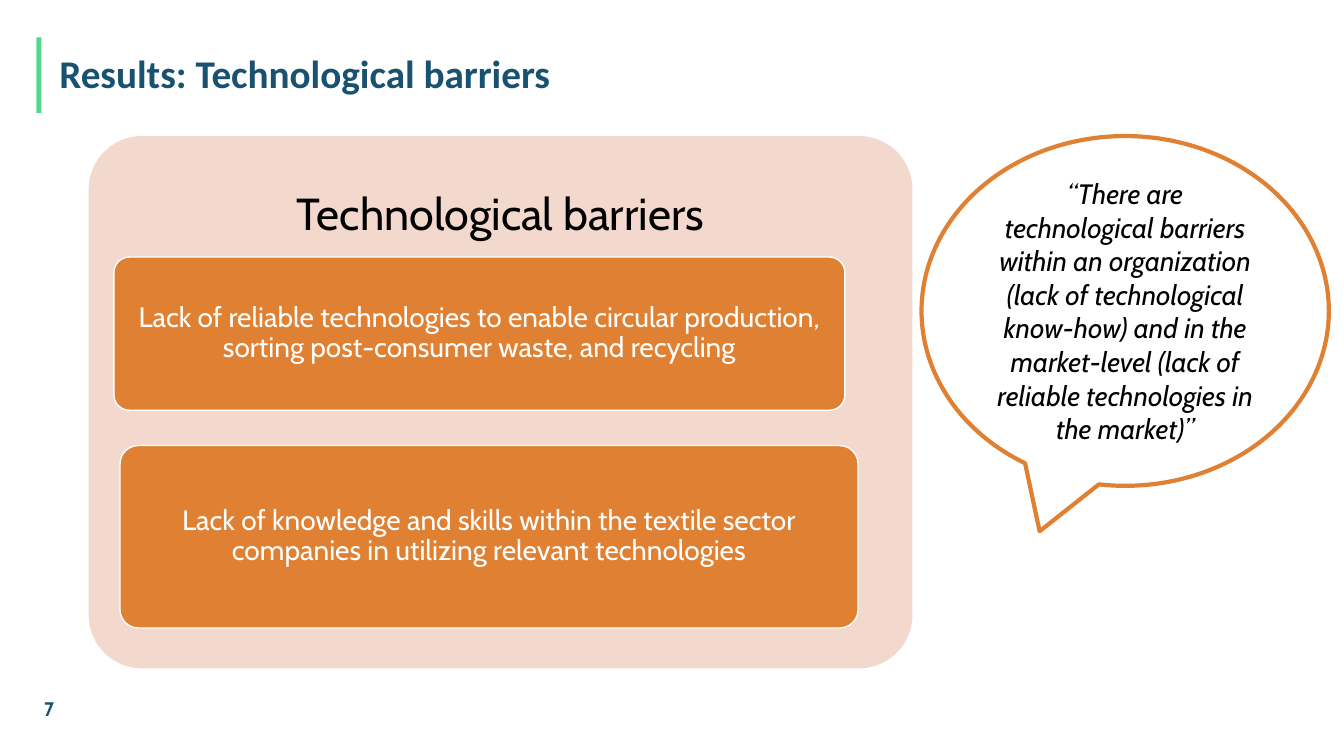
from pptx import Presentation
from pptx import util as u
from pptx.dml.color import RGBColor
from pptx.enum import shapes, text

NAVY = RGBColor(0x19, 0x51, 0x70)
GREEN = RGBColor(0x50, 0xD8, 0x88)
PINK = RGBColor(0xF3, 0xD8, 0xCE)
ORANGE = RGBColor(0xE0, 0x80, 0x32)
WHITE = RGBColor(0xFF, 0xFF, 0xFF)
BLACK = RGBColor(0, 0, 0)

LEFT, CENTER = text.PP_ALIGN.LEFT, text.PP_ALIGN.CENTER
SHAPE = shapes.MSO_SHAPE


class SlideBuilder:
    """Holds the text style and the current slide."""

    base_font = {"name": "Cabin", "size": u.Pt(20), "bold": False, "italic": False}

    def __init__(self, slide):
        self.slide = slide

    def set_text(self, holder, words, color, align=CENTER, spacing=1.0,
                 insets=(0.1, 0.05), **font):
        frame = holder.text_frame
        across, down = map(u.Inches, insets)
        layout = {"word_wrap": True, "vertical_anchor": text.MSO_ANCHOR.MIDDLE,
                  "margin_left": across, "margin_right": across,
                  "margin_top": down, "margin_bottom": down}
        for key, value in layout.items():
            setattr(frame, key, value)
        paragraph = frame.paragraphs[0]
        paragraph.alignment = align
        paragraph.line_spacing = spacing
        run = paragraph.add_run()
        run.text = words
        for key, value in {**self.base_font, **font}.items():
            setattr(run.font, key, value)
        run.font.color.rgb = color

    def label(self, box, words, color, **style):
        holder = self.slide.shapes.add_textbox(*map(u.Inches, box))
        self.set_text(holder, words, color, **style)

    def block(self, kind, box, fill, line=None, width=1, adjust=()):
        block = self.slide.shapes.add_shape(kind, *map(u.Inches, box))
        block.shadow.inherit = False
        block.fill.solid()
        block.fill.fore_color.rgb = fill
        if line is None:
            block.line.fill.background()
        else:
            block.line.color.rgb = line
            block.line.width = u.Pt(width)
        for index, value in enumerate(adjust):
            block.adjustments[index] = value
        return block


def main():
    deck = Presentation()
    deck.slide_width, deck.slide_height = u.Inches(13.33), u.Inches(7.5)
    page = SlideBuilder(deck.slides.add_slide(deck.slide_layouts[6]))

    # Title with accent bar, and page number
    page.block(SHAPE.RECTANGLE, (0.36, 0.37, 0.05, 0.75), GREEN)
    page.label((0.49, 0.37, 11.5, 0.76), "Results: Technological barriers", NAVY,
               align=LEFT, spacing=0.9, name="Calibri", size=u.Pt(28), bold=True)
    page.label((0.34, 6.83, 3, 0.4), "7", NAVY, align=LEFT, size=u.Pt(14), bold=True)

    # Panel with its heading
    page.block(SHAPE.ROUNDED_RECTANGLE, (0.88, 1.35, 8.17, 5.28), PINK, adjust=[0.1])
    page.label((0.88, 1.35, 8.17, 1.58), "Technological barriers", BLACK,
               spacing=0.9, insets=(0.13, 0.13), size=u.Pt(32))

    # Barriers
    barriers = [
        ((1.13, 2.55, 7.25, 1.52),
         "Lack of reliable technologies to enable circular production, "
         "sorting post-consumer waste, and recycling"),
        ((1.19, 4.42, 7.32, 1.81),
         "Lack of knowledge and skills within the textile sector "
         "companies in utilizing relevant technologies"),
    ]
    for box, words in barriers:
        barrier = page.block(SHAPE.ROUNDED_RECTANGLE, box, ORANGE, WHITE, adjust=[0.1])
        page.set_text(barrier, words, WHITE, spacing=0.9, insets=(0.06, 0.04))

    # Interview quote
    quote = page.block(SHAPE.OVAL_CALLOUT, (9.14, 1.35, 4.04, 3.47), WHITE, ORANGE,
                       width=3, adjust=[-0.21, 0.63])
    page.set_text(quote, "“There are technological barriers within an organization "
                  "(lack of technological know-how) and in the market-level "
                  "(lack of reliable technologies in the market)”", BLACK, italic=True)

    deck.save("out.pptx")


if __name__ == "__main__":
    main()
